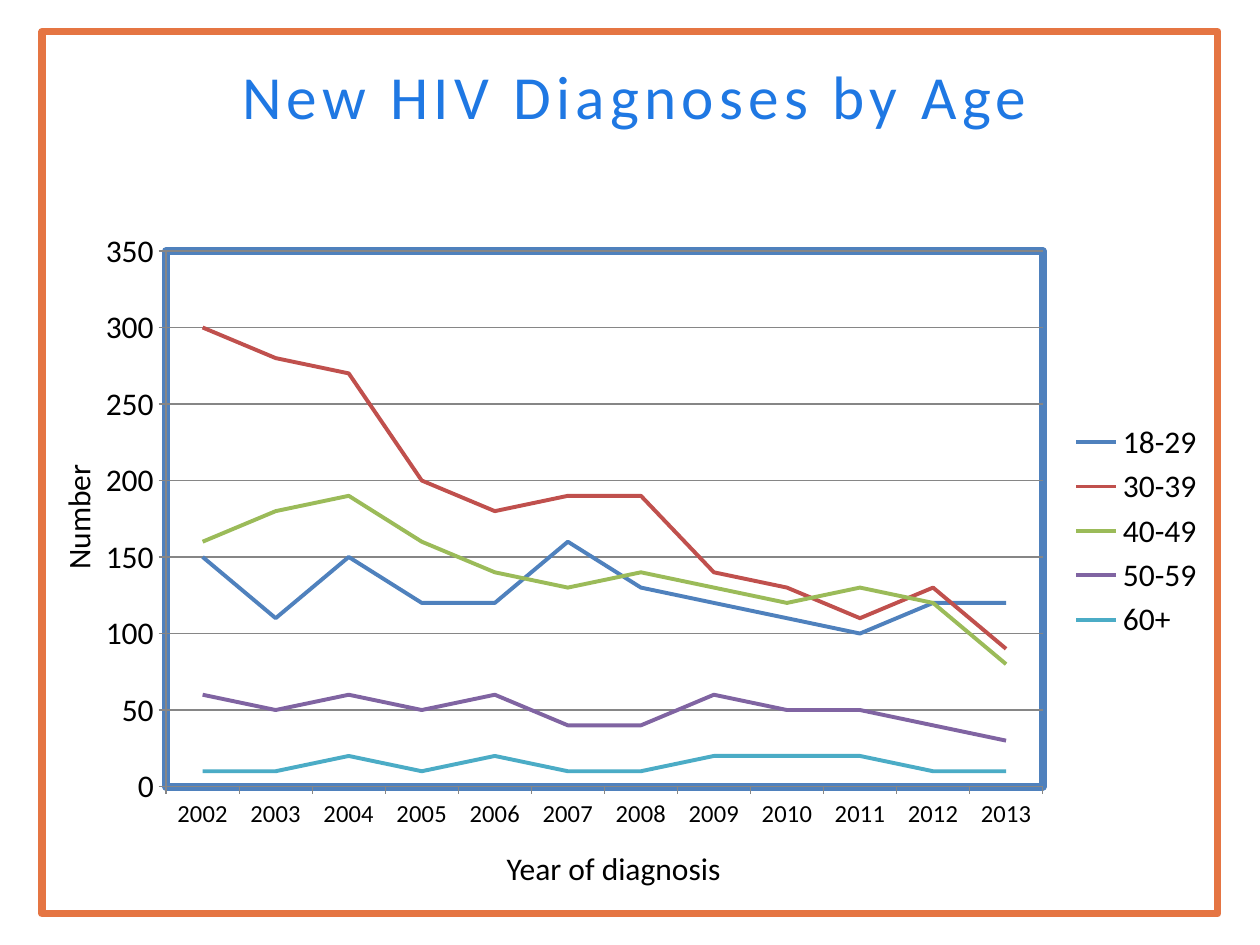
from lxml.etree import SubElement as Sub
from pptx import Presentation as Deck
from pptx.chart.data import CategoryChartData as Data
from pptx.dml.color import RGBColor as Rgb
from pptx.enum.chart import XL_CHART_TYPE as Kind, XL_LEGEND_POSITION as Side
from pptx.enum.chart import XL_TICK_MARK as Tick
from pptx.enum.shapes import MSO_SHAPE as Form
from pptx.enum.text import MSO_ANCHOR as Anchor, PP_ALIGN as Align
from pptx.oxml import parse_xml
from pptx.oxml.ns import nsdecls, qn
from pptx.util import Cm, Pt

FACE = "Calibri"
BODY = {"name": FACE, "size": Pt(18), "bold": False}
YEARS = [str(y) for y in range(2002, 2014)]
AGES = [
    ("18-29", "4F81BD", (150, 110, 150, 120, 120, 160, 130, 120, 110, 100, 120, 120)),
    ("30-39", "C0504D", (300, 280, 270, 200, 180, 190, 190, 140, 130, 110, 130, 90)),
    ("40-49", "9BBB59", (160, 180, 190, 160, 140, 130, 140, 130, 120, 130, 120, 80)),
    ("50-59", "8064A2", (60, 50, 60, 50, 60, 40, 40, 60, 50, 50, 40, 30)),
    ("60+", "4BACC6", (10, 10, 20, 10, 20, 10, 10, 20, 20, 20, 10, 10)),
]
PLOT = {"x": 0.073, "y": 0.051, "w": 0.773, "h": 0.859}  # shares of the chart


def hue(code):
    return Rgb.from_string(code)


def put(item, vals):
    for key, val in vals.items():
        setattr(item, key, val)


def style(font, code="000000", **more):
    put(font, {**BODY, **more})
    font.color.rgb = hue(code)


def rule(line, code, width):
    line.color.rgb = hue(code)
    line.width = Pt(width)


def add_frame(slide):
    frame = slide.shapes.add_shape(Form.RECTANGLE, Cm(0.85), Cm(0.64), Cm(23.7), Cm(17.78))
    frame.shadow.inherit = False
    frame.fill.background()
    rule(frame.line, "E57543", 4.25)
    slide.shapes._spTree.insert(2, frame._element)  # behind the title


def set_title(slide, text):
    title = slide.shapes.title
    put(title, {"left": Cm(1.27), "top": Cm(0.43), "width": Cm(23.06), "height": Cm(2.97)})
    title.text_frame.vertical_anchor = Anchor.MIDDLE
    para = title.text_frame.paragraphs[0]
    para.alignment = Align.CENTER
    run = para.add_run()
    run.text = text
    style(run.font, "1F78E3", size=Pt(35))
    run.font._element.set("spc", "300")


def add_label(slide, text, box, turn=0, wrap=True):
    label = slide.shapes.add_textbox(*map(Cm, box))
    label.rotation = turn
    label.text_frame.word_wrap = wrap
    para = label.text_frame.paragraphs[0]
    para.alignment = Align.CENTER
    run = para.add_run()
    run.text = text
    style(run.font)


def set_plot(chart):
    """Fix the inner plot area and give it a border."""
    area = chart._chartSpace.chart.plotArea
    for old in area.findall(qn("c:layout")):
        area.remove(old)
    layout = parse_xml(f"<c:layout {nsdecls('c')}/>")
    manual = Sub(layout, qn("c:manualLayout"))
    marks = {"layoutTarget": "inner", "xMode": "edge", "yMode": "edge", **PLOT}
    for key, val in marks.items():
        Sub(manual, qn("c:" + key)).set("val", str(val))
    area.insert(0, layout)
    area.append(parse_xml(
        f'<c:spPr {nsdecls("c", "a")}><a:noFill/><a:ln w="57150"><a:solidFill>'
        '<a:srgbClr val="4F81BD"/></a:solidFill></a:ln></c:spPr>'))


def add_lines(slide):
    data = Data()
    data.categories = YEARS
    for name, _, vals in AGES:
        data.add_series(name, vals)
    box = map(Cm, (1.68, 4.42, 22.86, 12.57))
    chart = slide.shapes.add_chart(Kind.LINE, *box, data).chart
    style(chart.font)
    put(chart, {"has_title": False, "has_legend": True})
    put(chart.legend, {"position": Side.RIGHT, "include_in_layout": False})
    style(chart.legend.font)
    chart.plots[0].vary_by_categories = False

    # Axes
    for axis, size in ((chart.category_axis, 14), (chart.value_axis, 18)):
        put(axis, {"major_tick_mark": Tick.OUTSIDE, "minor_tick_mark": Tick.NONE})
        style(axis.tick_labels.font, size=Pt(size))
        rule(axis.format.line, "868686", 0.75)
    put(chart.value_axis, {"minimum_scale": 0, "maximum_scale": 350,
                           "major_unit": 50, "has_major_gridlines": True})
    rule(chart.value_axis.major_gridlines.format.line, "868686", 0.75)

    # Age groups
    for line, (_, code, _) in zip(chart.plots[0].series, AGES):
        line.smooth = False
        rule(line.format.line, code, 2.25)
    set_plot(chart)


def main():
    deck = Deck()
    put(deck, {"slide_width": Cm(25.4), "slide_height": Cm(19.05)})
    slide = deck.slides.add_slide(deck.slide_layouts[5])
    add_frame(slide)
    set_title(slide, "New HIV Diagnoses by Age")
    add_lines(slide)
    # Axis captions
    add_label(slide, "Year of diagnosis", (3.38, 16.99, 17.98, 1.02))
    add_label(slide, "Number", (0.18, 9.91, 2.79, 1.02), turn=270, wrap=False)
    deck.save("out.pptx")


if __name__ == "__main__":
    main()
